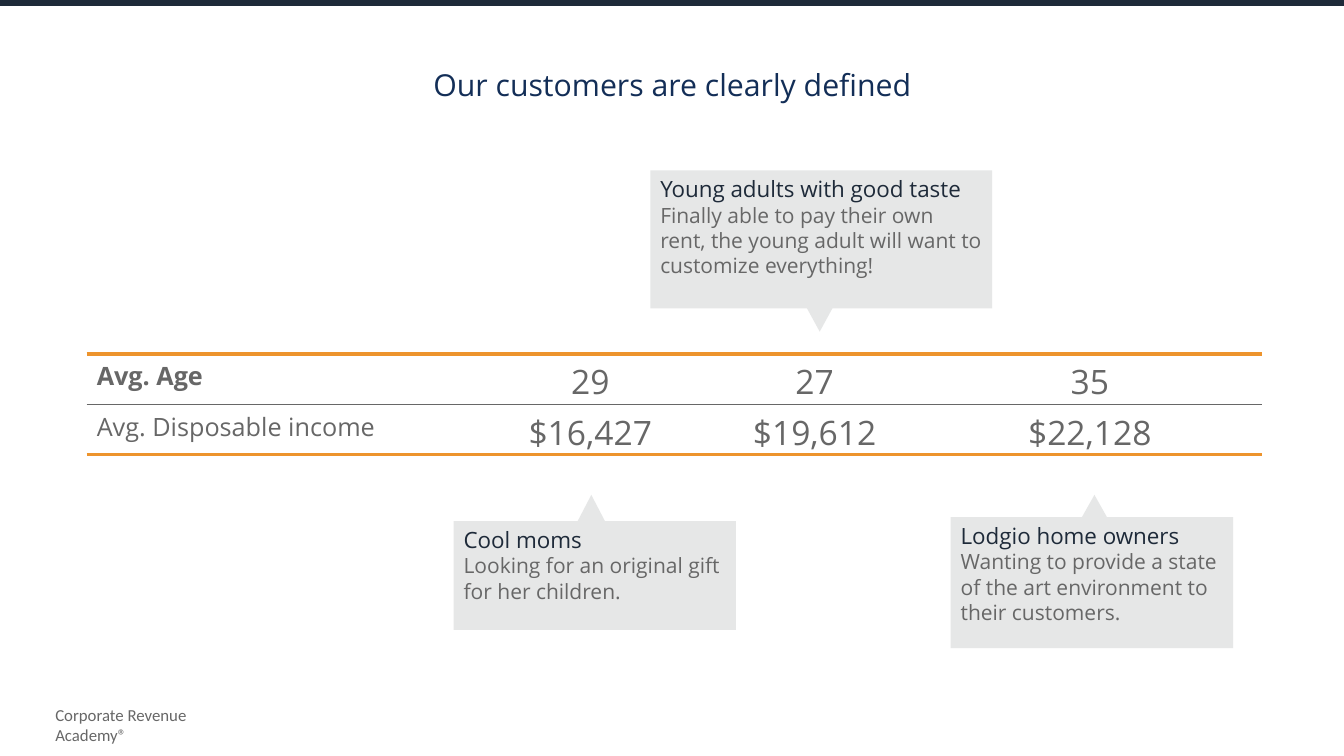
from lxml import etree
from pptx import Presentation
from pptx import util as u
from pptx.dml.color import RGBColor
from pptx.enum import shapes, text
from pptx.oxml import ns

NAVY = RGBColor(0x1E, 0x2A, 0x39)
BLUE = RGBColor(0x13, 0x2E, 0x57)
GRAY = RGBColor(0x67, 0x67, 0x67)
PALE = RGBColor(0xE6, 0xE7, 0xE7)
GOLD = RGBColor(0xED, 0x94, 0x2D)

FONT = "Open Sans"
LEFT, MID = text.PP_ALIGN.LEFT, text.PP_ALIGN.CENTER
RECT, TRI = shapes.MSO_SHAPE.RECTANGLE, shapes.MSO_SHAPE.ISOSCELES_TRIANGLE


def px(*sizes):
    """Turn px, a hundred to the inch, into EMU."""
    return [u.Emu(size * 9144) for size in sizes]


class Deck:
    def __init__(self, wide, high):
        self.show = Presentation()
        self.show.slide_width, self.show.slide_height = px(wide, high)
        self.slide = self.show.slides.add_slide(self.show.slide_layouts[6])

    def style(self, para, size, color, align=LEFT, bold=False, font=FONT):
        para.alignment = align
        for run in para.runs:
            run.font.size = u.Pt(size)
            run.font.name = font
            run.font.bold = bold
            run.font.color.rgb = color

    def shape(self, kind, box, color, home=None):
        item = (home or self.slide).shapes.add_shape(kind, *px(*box))
        item.shadow.inherit = False
        item.fill.solid()
        item.fill.fore_color.rgb = color
        item.line.fill.background()
        return item

    def label(self, box, words, size, color, align=LEFT, font=FONT, wrap=True):
        frame = self.slide.shapes.add_textbox(*px(*box)).text_frame
        frame.word_wrap = wrap
        frame.text = words
        self.style(frame.paragraphs[0], size, color, align, font=font)
        return frame

    def callout(self, box, tip, turn, head, body):
        """Group a text panel with the triangle that points at the table."""
        group = self.slide.shapes.add_group_shape()
        panel = self.shape(RECT, box, PALE, group)
        frame = panel.text_frame
        frame.word_wrap = True
        frame.vertical_anchor = text.MSO_ANCHOR.TOP
        frame.text = f"{head}\n{body}"
        first, second = frame.paragraphs
        self.style(first, 16, NAVY)
        self.style(second, 15, GRAY)
        self.shape(TRI, tip, PALE, group).rotation = turn

    def edge(self, cell, lines):
        """Draw the cell borders; a side without a line is left open."""
        props = cell._tc.get_or_add_tcPr()
        for spot, side in enumerate(("lnL", "lnR", "lnT", "lnB")):
            line = etree.Element(ns.qn(f"a:{side}"))
            if side in lines:
                color, width = lines[side]
                line.set("w", str(u.Pt(width)))
                fill = etree.SubElement(line, ns.qn("a:solidFill"))
                etree.SubElement(fill, ns.qn("a:srgbClr"), val=str(color))
            else:
                etree.SubElement(line, ns.qn("a:noFill"))
            props.insert(spot, line)

    def table(self, box, wides, rows):
        frame = self.slide.shapes.add_table(len(rows), len(wides), *px(*box))
        grid = frame.table
        grid.first_row = grid.horz_banding = False
        for col, wide in zip(grid.columns, px(*wides)):
            col.width = wide
        thick, thin = (GOLD, 3), (GRAY, 0.5)
        for r, row in enumerate(rows):
            lines = {"lnT": thin if r else thick,
                     "lnB": thick if r == len(rows) - 1 else thin}
            for c, words in enumerate(row):
                cell = grid.cell(r, c)
                cell.text = words
                cell.margin_top, cell.margin_bottom = px(5, 0)
                cell.fill.background()
                self.edge(cell, lines)
                para = cell.text_frame.paragraphs[0]
                if c:
                    self.style(para, 24, GRAY, MID)
                else:
                    self.style(para, 18, GRAY, bold=r == 0)


def main():
    deck = Deck(1333, 750)
    bar = deck.shape(RECT, (0, 0, 1333, 5), NAVY)
    bar.line.color.rgb = NAVY
    bar.line.width = u.Pt(1)
    deck.label((45, 694, 219, 30), "Corporate Revenue Academy®", 12, GRAY,
               font="Calibri", wrap=False)
    title = deck.label((167, 70, 1000, 37), "Our customers are clearly defined",
                       21.6, BLUE, MID)
    title.vertical_anchor = text.MSO_ANCHOR.MIDDLE
    title.paragraphs[0].line_spacing = 0.7

    deck.callout((450, 517, 280, 108), (573, 491, 27, 26), 0, "Cool moms",
                 "Looking for an original gift for her children.")
    deck.callout((645, 169, 339, 137), (795, 296, 36, 33), 180,
                 "Young adults with good taste",
                 "Finally able to pay their own rent, the young adult "
                 "will want to customize everything!")
    deck.callout((943, 513, 280, 130), (1072, 491, 27, 24), 0,
                 "Lodgio home owners",
                 "Wanting to provide a state of the art environment "
                 "to their customers.")

    deck.table((86, 351, 1166, 100), (379, 241, 204, 342), (
        ("Avg. Age", "29", "27", "35"),
        ("Avg. Disposable income", "$16,427", "$19,612", "$22,128"),
    ))
    deck.show.save("out.pptx")


if __name__ == "__main__":
    main()
